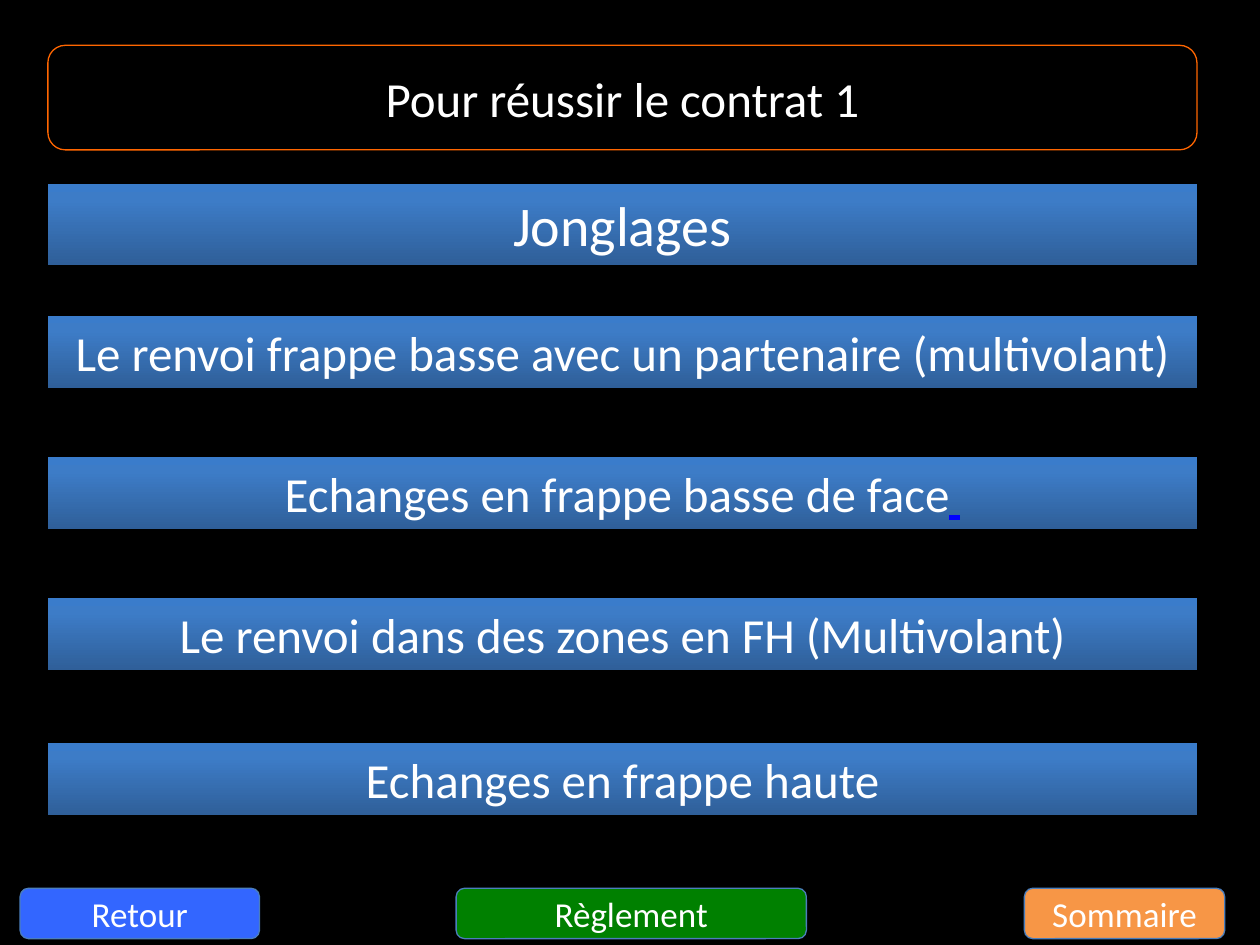
"""Build the menu slide for contract 1."""
import copy
import pptx
import pptx.util
import pptx.dml.color
import pptx.enum.shapes
import pptx.enum.text
import pptx.oxml.ns

HUES = {"night": "000000", "text": "FFFFFF", "frame": "FF6600", "edge": "4B7EBC",
        "orange": "F79646", "green": "008000", "blue": "3366FF", "link": "0000FF",
        "dark": "2F5F99", "mid": "3D7CC7", "light": "3A7CCB"}
FADE = [(0, "dark"), (0.8, "mid"), (1, "light")]
COLS, ROWS = 100, 75
LEFT, WIDE = 3.8, 91.2


class Menu:
    def __init__(self, deck):
        self.font = "Calibri"
        self.unit = deck.slide_width / COLS
        self.step = deck.slide_height / ROWS
        self.slide = deck.slides.add_slide(deck.slide_layouts[6])
        back = self.slide.background.fill
        back.solid()
        back.fore_color.rgb = self.hue("night")

    def hue(self, name):
        return pptx.dml.color.RGBColor.from_string(HUES[name])

    def block(self, kind, text, col, row, wide, high, size):
        shape = self.slide.shapes.add_shape(
            kind, round(col * self.unit), round(row * self.step),
            round(wide * self.unit), round(high * self.step))
        shape.shadow.inherit = False
        frame = shape.text_frame
        frame.word_wrap = True
        para = frame.paragraphs[0]
        para.alignment = pptx.enum.text.PP_ALIGN.CENTER
        para.font.name = self.font
        para.font.size = pptx.util.Pt(size)
        para.font.color.rgb = self.hue("text")
        para.add_run().text = text
        return shape

    def panel(self, text, col, row, wide, high, size, edge, fill=None):
        kind = pptx.enum.shapes.MSO_SHAPE.ROUNDED_RECTANGLE
        shape = self.block(kind, text, col, row, wide, high, size)
        shape.text_frame.vertical_anchor = pptx.enum.text.MSO_ANCHOR.MIDDLE
        shape.line.color.rgb = self.hue(edge)
        shape.line.width = pptx.util.Pt(0.75)
        if fill:
            shape.fill.solid()
            shape.fill.fore_color.rgb = self.hue(fill)
        else:
            shape.fill.background()

    def bar(self, text, row, high=5.7, size=28, tail=None):
        kind = pptx.enum.shapes.MSO_SHAPE.RECTANGLE
        shape = self.block(kind, text, LEFT, row, WIDE, high, size)
        shape.line.fill.background()
        self.fade(shape)
        frame = shape.text_frame
        frame.vertical_anchor = pptx.enum.text.MSO_ANCHOR.TOP
        frame.auto_size = pptx.enum.text.MSO_AUTO_SIZE.SHAPE_TO_FIT_TEXT
        if tail:
            run = frame.paragraphs[0].add_run()
            run.text = tail
            run.font.underline = True
            run.font.color.rgb = self.hue("link")

    def fade(self, shape):
        shape.fill.gradient()
        shape.fill.gradient_angle = 90
        stops = next(shape._element.spPr.iter(pptx.oxml.ns.qn("a:gsLst")))
        stops.append(copy.deepcopy(stops[0]))
        for stop, (place, name) in zip(shape.fill.gradient_stops, FADE):
            stop.position = place
            stop.color.rgb = self.hue(name)


def main():
    deck = pptx.Presentation()
    deck.slide_width = pptx.util.Inches(10)
    deck.slide_height = pptx.util.Inches(7.5)
    menu = Menu(deck)
    menu.panel("Pour réussir le contrat 1", LEFT, 3.6, WIDE, 8.3, 28, "frame")
    for text, col, wide, fill in [("Sommaire", 81.3, 15.9, "orange"),
                                  ("Règlement", 36.2, 27.8, "green"),
                                  ("Retour", 1.6, 19, "blue")]:
        menu.panel(text, col, 70.5, wide, 4, 20, "edge", fill)
    menu.bar("Jonglages", 14.6, high=6.4, size=32)
    menu.bar("Le renvoi frappe basse avec un partenaire (multivolant)", 25.1)
    menu.bar("Echanges en frappe basse de face", 36.3, tail=" ")
    menu.bar("Le renvoi dans des zones en FH (Multivolant)", 47.5)
    menu.bar("Echanges en frappe haute", 59)
    deck.save("out.pptx")


if __name__ == "__main__":
    main()
